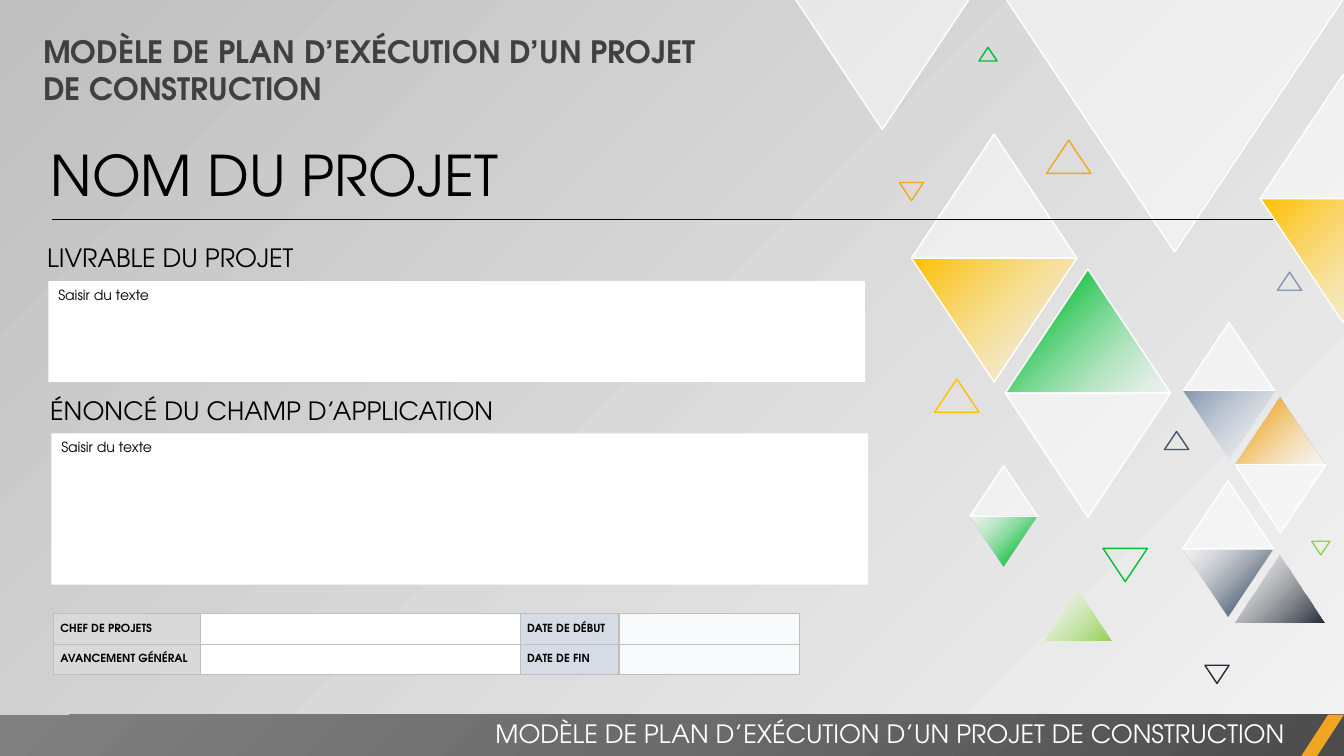
"""Build the cover slide of a construction project execution plan template."""
from lxml import etree
from pptx import Presentation
from pptx.dml.color import RGBColor
from pptx.enum.shapes import MSO_CONNECTOR, MSO_SHAPE
from pptx.enum.text import MSO_ANCHOR, MSO_AUTO_SIZE, PP_ALIGN
from pptx.oxml.ns import qn
from pptx.util import Inches, Pt

TRIANGLE, RECT, SLANT = MSO_SHAPE.ISOSCELES_TRIANGLE, MSO_SHAPE.RECTANGLE, MSO_SHAPE.PARALLELOGRAM
STRAIGHT = MSO_CONNECTOR.STRAIGHT
TOP, MIDDLE = MSO_ANCHOR.TOP, MSO_ANCHOR.MIDDLE
LEFT, RIGHT = PP_ALIGN.LEFT, PP_ALIGN.RIGHT
GROW = MSO_AUTO_SIZE.SHAPE_TO_FIT_TEXT
FONT = "TeX Gyre Adventor"
TITLE = "MODÈLE DE PLAN D’EXÉCUTION D’UN PROJET DE CONSTRUCTION"
C = {
    "white": "FFFFFF", "black": "000000", "heading": "404040",
    "yellow": "FFC000", "orange": "F0A622", "green": "00BD32", "lime": "92D050",
    "navy": "222A35", "slate": "44546A", "steel": "8497B0",
    "bg_light": "F2F2F2", "bg_dark": "BFBFBF", "border": "BFBFBF",
    "bar_dark": "4C4C4C", "bar_mid": "6B6B6B", "bar_light": "808080",
    "label": "D9D9D9", "date_label": "D6DCE5", "date": "F7F9FB",
}


def set_gradient(fill, parent, stops, radial=False):
    """Fill with (position, colour, opacity) stops, in percent."""
    fill.gradient()
    grad = next(parent.iter(qn("a:gradFill")))
    grad.clear()
    grad.set("rotWithShape", "1")
    gs_list = etree.SubElement(grad, qn("a:gsLst"))
    for position, color, opacity in stops:
        gs = etree.SubElement(gs_list, qn("a:gs"), pos=str(position * 1000))
        clr = etree.SubElement(gs, qn("a:srgbClr"), val=C[color])
        if opacity < 100:
            etree.SubElement(clr, qn("a:alpha"), val=str(opacity * 1000))
    if radial:
        path = etree.SubElement(grad, qn("a:path"), path="circle")
        etree.SubElement(path, qn("a:fillToRect"), l="100000", t="100000")
    else:
        etree.SubElement(grad, qn("a:lin"), ang=str(225 * 60000), scaled="0")


def add_text(tf, text, size, color="black", bold=False, align=LEFT):
    """Write one run in the first paragraph of a text frame."""
    p = tf.paragraphs[0]
    p.alignment = align
    r = p.add_run()
    r.text = text
    r.font.name, r.font.size, r.font.bold = FONT, Pt(size), bold
    r.font.color.rgb = RGBColor.from_string(C[color])
    return p


prs = Presentation()
prs.slide_width, prs.slide_height = Inches(13.33), Inches(7.5)
s = prs.slides.add_slide(prs.slide_layouts[6])
set_gradient(s.background.fill, s._element, [(0, "bg_light", 40), (100, "bg_dark", 100)])

# left, top, width, points down, fill, fade, line
triangles = [
    (9.04, 1.33, 1.64, False, "glass", None, "white"),
    (9.04, 2.56, 1.64, True, "yellow", "out", "white"),
    (9.97, 2.67, 1.64, False, "green", "in", "white"),
    (9.97, 3.9, 1.64, True, "glass", None, "white"),
    (9.97, -0.02, 3.36, True, "glass", None, "white"),
    (12.24, 5.5, 0.9, False, "navy", "out", None),
    (11.73, 5.44, 0.9, True, "slate", "in", None),
    (11.73, 4.77, 0.9, False, "glass", None, "white"),
    (11.74, 3.2, 0.9, False, "glass", None, "white"),
    (11.74, 3.88, 0.9, True, "steel", "out", None),
    (12.25, 3.94, 0.9, False, "orange", "in", None),
    (12.25, 4.61, 0.9, True, "glass", None, "white"),
    (10.35, 5.85, 0.67, False, "lime", "out", None),
    (9.62, 5.12, 0.67, True, "green", "in", None),
    (9.62, 4.62, 0.67, False, "glass", None, "white"),
    (12.5, 0.74, 1.64, False, "glass", None, "white"),
    (12.5, 1.97, 1.64, True, "yellow", "out", "white"),
    (10.94, 5.44, 0.44, True, None, None, "green"),
    (9.27, 3.76, 0.44, False, None, None, "yellow"),
    (11.55, 4.28, 0.24, False, None, None, "slate"),
    (11.95, 6.6, 0.24, True, None, None, "navy"),
    (8.92, 1.81, 0.24, True, None, None, "orange"),
    (12.67, 2.7, 0.24, False, None, None, "steel"),
    (9.71, 0.47, 0.18, False, None, None, "green"),
    (13.01, 5.37, 0.18, True, None, None, "lime"),
    (10.38, 1.39, 0.44, False, None, None, "orange"),
    (7.88, -0.02, 1.74, True, "glass", None, "white"),
]
group = s.shapes.add_group_shape()
for x, y, w, down, fill, fade, line in triangles:
    sp = group.shapes.add_shape(TRIANGLE, Inches(x), Inches(y), Inches(w), Inches(w * 0.75))
    sp.shadow.inherit = False
    sp.rotation = 180 if down else 0
    if fill == "glass":
        sp.fill.solid()
        sp.fill.fore_color.rgb = RGBColor.from_string(C["white"])
        clr = next(sp._element.iter(qn("a:srgbClr")))
        etree.SubElement(clr, qn("a:alpha"), val="50000")
    elif fade == "out":
        set_gradient(sp.fill, sp._element, [(0, fill, 100), (100, "white", 50)])
    elif fade == "in":
        set_gradient(sp.fill, sp._element, [(0, "white", 50), (82, fill, 100)])
    else:
        sp.fill.background()
    if line:
        sp.line.color.rgb = RGBColor.from_string(C[line])
        sp.line.width = Pt(1)
    else:
        sp.line.fill.background()

bar = s.shapes.add_shape(RECT, 0, Inches(7.09), Inches(13.33), Inches(0.41))
bar.shadow.inherit = False
bar.line.fill.background()
set_gradient(bar.fill, bar._element,
             [(0, "bar_dark", 100), (50, "bar_mid", 100), (100, "bar_light", 100)], radial=True)

accent = s.shapes.add_shape(SLANT, Inches(12.9), Inches(7.09), Inches(0.43), Inches(0.42))
accent.adjustments[0] = 0.65
accent.shadow.inherit = False
accent.fill.solid()
accent.fill.fore_color.rgb = RGBColor.from_string(C["orange"])
accent.line.fill.background()

texts = [
    (0.33, 0.28, 6.67, 0.84, TITLE, 22, "heading", True, LEFT),
    (3.97, 7.08, 8.87, 0.4, TITLE, 18, "white", False, RIGHT),
    (0.4, 1.35, 12.27, 0.77, "NOM DU PROJET", 40, "black", False, LEFT),
    (0.37, 2.36, 3.05, 0.4, "LIVRABLE DU PROJET", 18, "black", False, LEFT),
    (0.4, 3.87, 5.04, 0.4, "ÉNONCÉ DU CHAMP D’APPLICATION", 18, "black", False, LEFT),
]
for x, y, w, h, text, size, color, bold, align in texts:
    tf = s.shapes.add_textbox(Inches(x), Inches(y), Inches(w), Inches(h)).text_frame
    tf.word_wrap = True
    tf.auto_size = GROW
    add_text(tf, text, size, color, bold, align)

rule = s.shapes.add_connector(STRAIGHT, Inches(0.52), Inches(2.18), Inches(12.63), Inches(2.18))
rule.line.color.rgb = RGBColor.from_string(C["black"])
rule.line.width = Pt(0.5)
etree.SubElement(rule._element.spPr, qn("a:effectLst"))

for x, y, h in [(0.48, 2.79, 1), (0.51, 4.3, 1.5)]:
    sp = s.shapes.add_shape(RECT, Inches(x), Inches(y), Inches(8.1), Inches(h))
    sp.shadow.inherit = False
    sp.fill.solid()
    sp.fill.fore_color.rgb = RGBColor.from_string(C["white"])
    sp.line.fill.background()
    sp.text_frame.word_wrap = True
    sp.text_frame.vertical_anchor = TOP
    add_text(sp.text_frame, "Saisir du texte", 10)

rows = [("CHEF DE PROJETS", "", "DATE DE DÉBUT", ""),
        ("AVANCEMENT GÉNÉRAL", "", "DATE DE FIN", "")]
columns = [(1.46, "label"), (3.17, "white"), (0.98, "date_label"), (1.79, "date")]
table = s.shapes.add_table(2, 4, Inches(0.53), Inches(6.09), Inches(7.4), Inches(0.6)).table
table.first_row = table.horz_banding = False
for j, (width, fill) in enumerate(columns):
    table.columns[j].width = Inches(width)
    for i, row in enumerate(rows):
        table.rows[i].height = Inches(0.3)
        cell = table.cell(i, j)
        cell.vertical_anchor = MIDDLE
        cell.margin_left = cell.margin_right = Inches(0.07)
        cell.margin_top = cell.margin_bottom = 0
        cell.fill.solid()
        cell.fill.fore_color.rgb = RGBColor.from_string(C[fill])
        if row[j]:
            add_text(cell.text_frame, row[j], 8, bold=True).line_spacing = 1.07
        else:
            etree.SubElement(cell.text_frame.paragraphs[0]._p, qn("a:endParaRPr"), sz="800")
        tc_pr = cell._tc.get_or_add_tcPr()
        for k, side in enumerate(("a:lnL", "a:lnR", "a:lnT", "a:lnB")):
            ln = etree.Element(qn(side), w=str(Pt(1)))
            solid = etree.SubElement(ln, qn("a:solidFill"))
            etree.SubElement(solid, qn("a:srgbClr"), val=C["border"])
            tc_pr.insert(k, ln)

prs.save("out.pptx")
